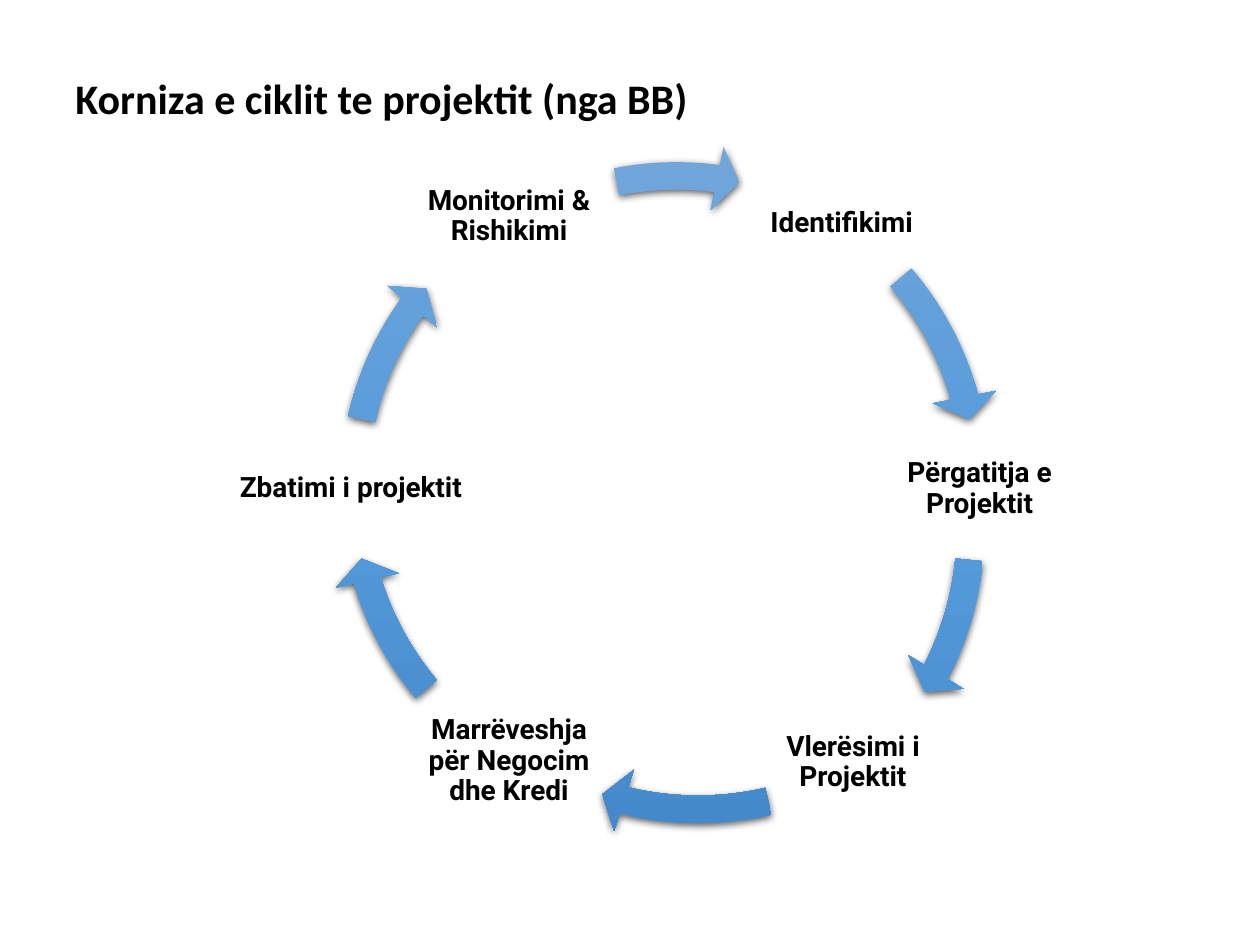
from dataclasses import dataclass

from lxml import etree
from pptx import Presentation
from pptx.dml.color import RGBColor
from pptx.enum.shapes import MSO_SHAPE
from pptx.enum.text import MSO_ANCHOR, MSO_AUTO_SIZE, PP_ALIGN
from pptx.oxml.ns import qn
from pptx.util import Inches, Pt

ARC_ARROW = MSO_SHAPE.CIRCULAR_ARROW
CENTER, MIDDLE = PP_ALIGN.CENTER, MSO_ANCHOR.MIDDLE
GROW = MSO_AUTO_SIZE.SHAPE_TO_FIT_TEXT

# Grid: 100 columns by 75 rows of a tenth of an inch
CELL = Inches(0.1)
COLUMNS, ROWS = 100, 75


@dataclass(frozen=True)
class Theme:
    ink: str = "000000"
    title_font: str = "Calibri"
    label_font: str = "Roboto"
    title_size: int = 24
    label_size: int = 16
    arrow_stops: tuple = ((0, "71A6DB"), (50, "559BDB"), (100, "448ACA"))
    shadow_opacity: int = 63
    shadow_blur: float = 4.5
    shadow_distance: float = 1.5


def cells(*values):
    return [round(value * CELL) for value in values]


def add_element(parent, tag, **attributes):
    values = {key: str(value) for key, value in attributes.items()}
    return etree.SubElement(parent, qn(tag), values)


class CycleSlide:
    DIAMETER = 54.6  # grid cells
    BAND, HEAD_WIDTH, HEAD_DEGREES = 0.04, 0.047, 4.17

    def __init__(self, slide, theme):
        self.slide, self.theme = slide, theme
        self.cycle = slide.shapes.add_group_shape()

    def add_wording(self, frame, text, font, size):
        paragraph = frame.paragraphs[0]
        run = paragraph.add_run()
        run.text = text
        style = {"name": font, "size": Pt(size), "bold": True}
        for key, value in style.items():
            setattr(run.font, key, value)
        run.font.color.rgb = RGBColor.from_string(self.theme.ink)
        return paragraph

    def title(self, text, box):
        frame = self.slide.shapes.add_textbox(*cells(*box)).text_frame
        frame.word_wrap = False
        frame.auto_size = GROW
        self.add_wording(frame, text, self.theme.title_font,
                         self.theme.title_size)

    def label(self, text, box):
        frame = self.cycle.shapes.add_textbox(*cells(*box)).text_frame
        margin = Inches(0.02)
        layout = {"word_wrap": True, "vertical_anchor": MIDDLE,
                  "margin_left": margin, "margin_right": margin,
                  "margin_top": margin, "margin_bottom": margin}
        for key, value in layout.items():
            setattr(frame, key, value)
        paragraph = self.add_wording(frame, text, self.theme.label_font,
                                     self.theme.label_size)
        paragraph.alignment = CENTER
        paragraph.line_spacing = 0.9

    def arrow(self, corner, start, end):
        """Arc arrow; start and end are clockwise degrees from the right."""
        box = (*corner, self.DIAMETER, self.DIAMETER)
        arc = self.cycle.shapes.add_shape(ARC_ARROW, *cells(*box))
        # Angles are stored in 60000ths of a degree, adjustments in 100000ths
        head, tip, tail = (degrees * 0.6
                           for degrees in (self.HEAD_DEGREES, end, start))
        settings = (self.BAND, head, tip, tail, self.HEAD_WIDTH)
        for index, value in enumerate(settings):
            arc.adjustments[index] = value
        arc.line.fill.background()
        self.shade(arc)

    def shade(self, shape):
        """Vertical gradient with a soft shadow below."""
        theme = self.theme
        shape.fill.gradient()
        shape.shadow.inherit = False
        properties = shape._element.spPr
        gradient = properties.find(qn("a:gradFill"))
        for child in list(gradient):
            gradient.remove(child)
        stops = add_element(gradient, "a:gsLst")
        for position, color in theme.arrow_stops:
            stop = add_element(stops, "a:gs", pos=position * 1000)
            add_element(stop, "a:srgbClr", val=color)
        add_element(gradient, "a:lin", ang=90 * 60000, scaled=0)

        shadow = add_element(
            properties.find(qn("a:effectLst")), "a:outerShdw",
            blurRad=Pt(theme.shadow_blur), dist=Pt(theme.shadow_distance),
            dir=90 * 60000, algn="ctr", rotWithShape=0)
        color = add_element(shadow, "a:srgbClr", val=theme.ink)
        add_element(color, "a:alpha", val=theme.shadow_opacity * 1000)


# Each stage: text, label box, then corner, start and end of the next arrow
STAGES = [
    ("Identifikimi", (58.8, 13.5, 16, 8.4), (25.4, 10.8), 319.52, 344.57),
    ("Përgatitja e Projektit", (69.6, 33.2, 16.3, 11.2),
     (25, 14.7), 5.65, 27.27),
    ("Vlerësimi i Projektit", (61.1, 54.9, 13.2, 11.2),
     (28.1, 12.2), 76.94, 103.71),
    ("Marrëveshja për Negocim dhe Kredi", (33, 54.8, 14.8, 11.2),
     (25.5, 11.5), 140.06, 162.89),
    ("Zbatimi i projektit", (16, 33.2, 23.7, 11.2),
     (25.5, 11.5), 192.94, 215.77),
    ("Monitorimi & Rishikimi", (31.8, 11.6, 17.2, 11.2),
     (26.4, 11.4), 258.93, 277.46),
]


def main():
    deck = Presentation()
    deck.slide_width, deck.slide_height = cells(COLUMNS, ROWS)
    blank = deck.slide_layouts[6]
    page = CycleSlide(deck.slides.add_slide(blank), Theme())

    # Heading
    page.title("Korniza e ciklit te projektit (nga BB)", (5, 5.3, 62.9, 5))

    # Project cycle, clockwise
    for text, box, corner, start, end in STAGES:
        page.label(text, box)
        page.arrow(corner, start, end)

    deck.save("out.pptx")


if __name__ == "__main__":
    main()
